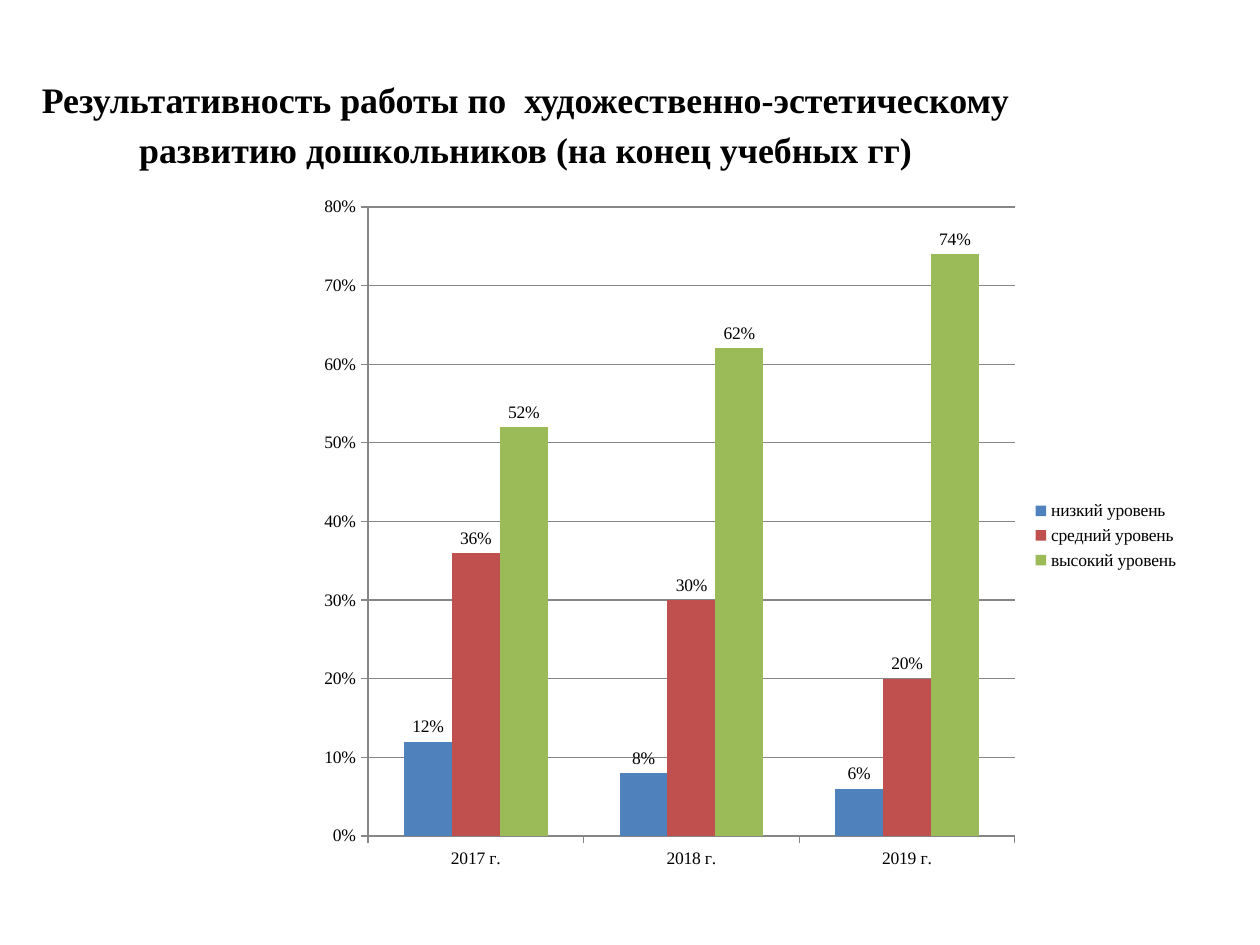
from lxml import etree
from pptx import Presentation
from pptx.chart.data import CategoryChartData
from pptx.dml.color import RGBColor
from pptx.enum.chart import XL_CHART_TYPE, XL_LABEL_POSITION, XL_LEGEND_POSITION, XL_TICK_MARK
from pptx.enum.text import MSO_ANCHOR, PP_ALIGN
from pptx.util import Pt

COLUMNS = XL_CHART_TYPE.COLUMN_CLUSTERED
LABEL_ABOVE = XL_LABEL_POSITION.OUTSIDE_END
LEGEND_RIGHT = XL_LEGEND_POSITION.RIGHT
TICK_OUT = XL_TICK_MARK.OUTSIDE
NO_TICK = XL_TICK_MARK.NONE
MIDDLE = MSO_ANCHOR.MIDDLE
CENTER = PP_ALIGN.CENTER
PX = 914400 / 126
CHART_NS = "http://schemas.openxmlformats.org/drawingml/2006/chart"

YEARS = ["2017 г.", "2018 г.", "2019 г."]
LEVELS = [
    ("низкий уровень", (0.12, 0.08, 0.06), "4F81BD"),
    ("средний уровень", (0.36, 0.3, 0.2), "C0504D"),
    ("высокий уровень", (0.52, 0.62, 0.74), "9BBB59"),
]


def px(length):
    return round(length * PX)


def color(hex_string):
    return RGBColor.from_string(hex_string)


class SlideBuilder:
    font_name = "Times New Roman"
    ink = "000000"
    grid = "868686"

    def __init__(self, slide):
        self.slide = slide

    def style_font(self, font, size, bold=False):
        font.name = self.font_name
        font.size = Pt(size)
        font.bold = bold
        font.color.rgb = color(self.ink)

    def style_line(self, line):
        line.color.rgb = color(self.grid)
        line.width = Pt(0.75)

    def heading(self, text, left, top, width, height, size):
        box = self.slide.shapes.add_textbox(px(left), px(top), px(width), px(height))
        frame = box.text_frame
        frame.word_wrap = True
        frame.vertical_anchor = MIDDLE
        frame.margin_left = frame.margin_right = 0
        frame.margin_top = 0
        frame.margin_bottom = px(22)
        frame.text = text
        paragraph = frame.paragraphs[0]
        paragraph.alignment = CENTER
        paragraph.line_spacing = 1.15
        self.style_font(paragraph.runs[0].font, size, bold=True)

    def column_chart(self, categories, series, left, top, width, height, plot_box):
        data = CategoryChartData(number_format="0%")
        data.categories = categories
        for name, values, _ in series:
            data.add_series(name, values)
        chart = self.slide.shapes.add_chart(
            COLUMNS, px(left), px(top), px(width), px(height), data
        ).chart
        chart.has_title = False
        self.style_font(chart.font, 10)
        chart.has_legend = True
        chart.legend.position = LEGEND_RIGHT
        chart.legend.include_in_layout = False
        self.style_font(chart.legend.font, 10)

        plot = chart.plots[0]
        plot.gap_width = 150
        plot.overlap = 0
        plot.vary_by_categories = False
        for level, (_, _, fill) in zip(plot.series, series):
            level.format.fill.solid()
            level.format.fill.fore_color.rgb = color(fill)
            labels = level.data_labels
            labels.show_value = True
            labels.position = LABEL_ABOVE
            labels.number_format = "0%"
            labels.number_format_is_linked = False
            self.style_font(labels.font, 10)

        for axis in (chart.category_axis, chart.value_axis):
            axis.major_tick_mark = TICK_OUT
            axis.minor_tick_mark = NO_TICK
            self.style_line(axis.format.line)
            self.style_font(axis.tick_labels.font, 10)
        value_axis = chart.value_axis
        value_axis.minimum_scale = 0
        value_axis.maximum_scale = 0.8
        value_axis.major_unit = 0.1
        value_axis.has_major_gridlines = True
        self.style_line(value_axis.major_gridlines.format.line)
        value_axis.tick_labels.number_format = "0%"
        value_axis.tick_labels.number_format_is_linked = False
        self.place_plot(chart, plot_box)

    def place_plot(self, chart, plot_box):
        tag = f"{{{CHART_NS}}}"
        plot_area = chart.element.find(f".//{tag}plotArea")
        for old_layout in plot_area.findall(f"{tag}layout"):
            plot_area.remove(old_layout)
        layout = etree.Element(f"{tag}layout")
        manual = etree.SubElement(layout, f"{tag}manualLayout")
        settings = [("layoutTarget", "inner"), ("xMode", "edge"), ("yMode", "edge")]
        settings += zip("xywh", plot_box)
        for setting, value in settings:
            etree.SubElement(manual, f"{tag}{setting}").set("val", str(value))
        plot_area.insert(0, layout)


def main():
    presentation = Presentation()
    presentation.slide_width = px(1260)
    presentation.slide_height = px(945)
    builder = SlideBuilder(presentation.slides.add_slide(presentation.slide_layouts[6]))
    builder.heading(
        "Результативность работы по  художественно-эстетическому "
        "развитию дошкольников (на конец учебных гг)",
        39, 88, 974, 88, 20.5,
    )
    builder.column_chart(YEARS, LEVELS, 306, 186, 886, 699, (0.07, 0.03, 0.73, 0.9))
    presentation.save("out.pptx")


if __name__ == "__main__":
    main()
